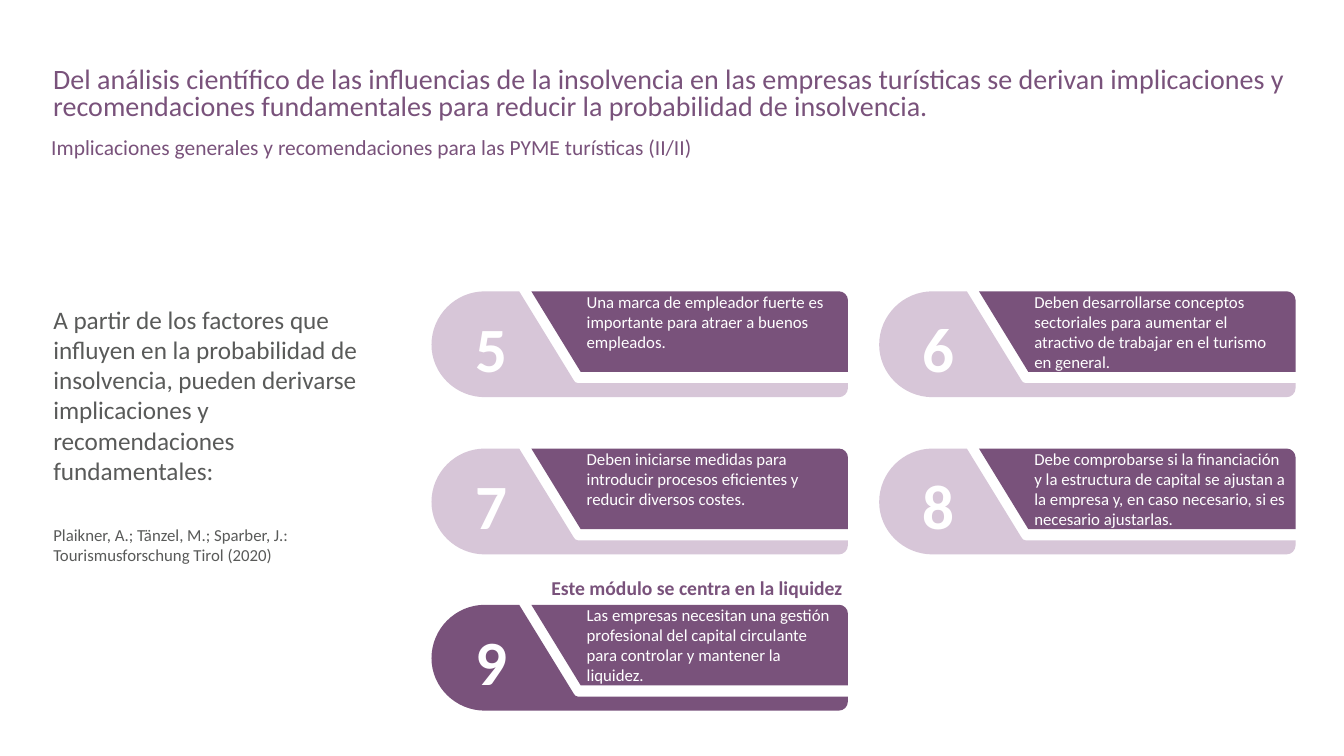
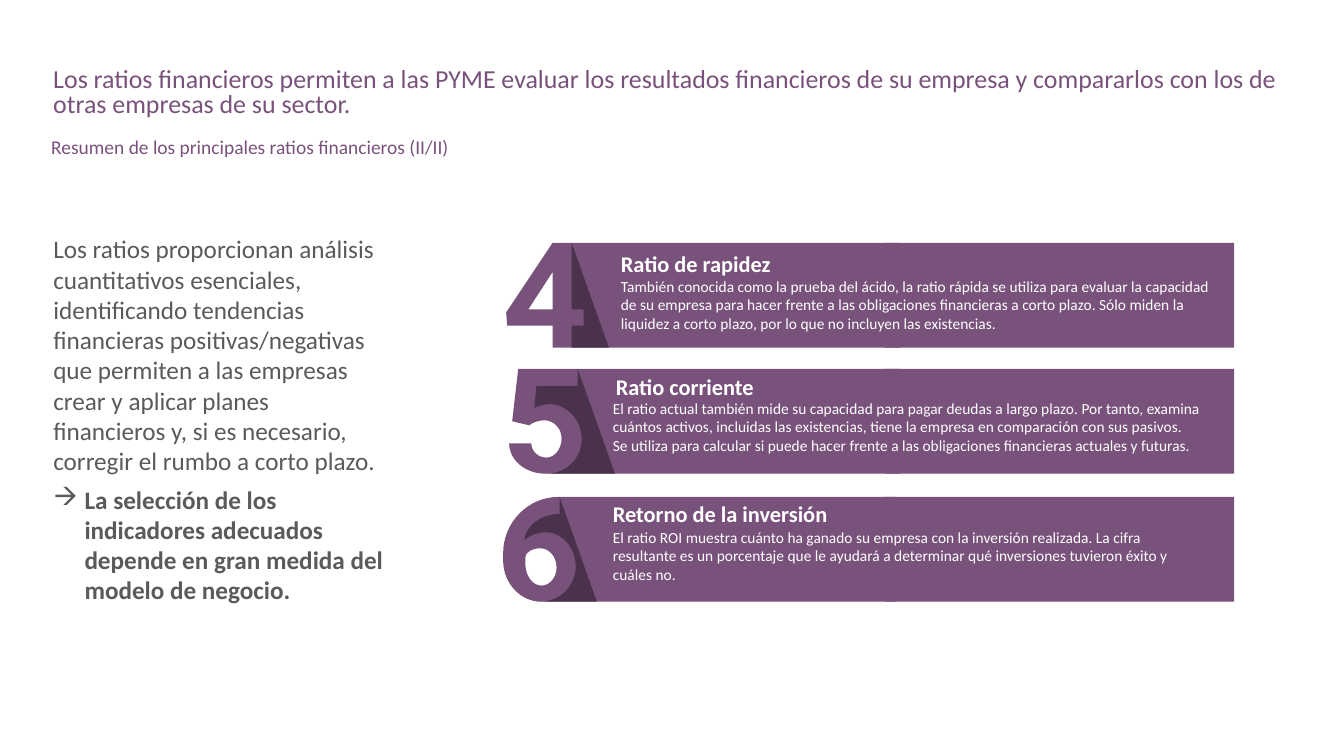
from dataclasses import dataclass

from lxml.etree import SubElement
from pptx import Presentation
from pptx.dml.color import RGBColor
from pptx.enum.shapes import MSO_SHAPE
from pptx.enum.text import MSO_ANCHOR as ANCHOR, PP_ALIGN as ALIGN
from pptx.oxml.ns import qn
from pptx.util import Inches, Pt


@dataclass(frozen=True)
class Theme:
    """Colours, fonts and type sizes shared by the slides."""
    plum: str = "79527B"
    lilac: str = "D7C6D8"
    shade: str = "4B324C"
    grey: str = "595A59"
    white: str = "FFFFFF"
    font: str = "Calibri"
    bullet_font: str = "Wingdings"
    number: float = 45
    lead: float = 18
    heading: float = 16
    note: float = 14
    small: float = 12
    detail: float = 11


T = Theme()

CARD_TOPS = (2.89, 4.45, 6)
CARD_PANEL = [[(0.99, 0), (4.04, 0), (4.13, 0, 4.13, 0.09), (4.13, 0.8), (1.48, 0.8)]]
CARD_BASE = [[(1.45, 0.91), (1.42, 0.91, 1.41, 0.88), (0.87, 0), (0.53, 0),
              (0, 0, 0, 0.53), (0, 1.05, 0.53, 1.05), (4.04, 1.05),
              (4.13, 1.05, 4.13, 0.96), (4.13, 0.91)]]

FOUR_BODY = [[(0.48, 0), (0.02, 0.69), (0.03, 0.82), (0.48, 0.82), (0.48, 1.04),
              (3.93, 1.04), (3.93, 0)],
             [(0.48, 0.66), (0.24, 0.66), (0.48, 0.29)]]
FOUR_SHADE = [[(0.67, 0), (0.67, 0.66), (0.79, 0.66), (0.79, 0.82), (0.67, 0.82),
               (0.67, 1.04), (1.04, 1.04)]]
FIVE_BODY = [[(0.14, 0), (0.08, 0.52), (0.25, 0.56), (0.3, 0.51, 0.4, 0.51),
              (0.57, 0.51, 0.57, 0.69), (0.57, 0.88, 0.42, 0.88),
              (0.27, 0.88, 0.27, 0.74), (0.05, 0.74), (0.05, 1.04, 0.41, 1.04),
              (3.93, 1.04), (3.93, 0)]]
FIVE_SHADE = [[(0.73, 0), (0.73, 0.17), (0.32, 0.17), (0.3, 0.39),
               (0.36, 0.35, 0.45, 0.35), (0.77, 0.35, 0.77, 0.7),
               (0.77, 1.04, 0.42, 1.04), (1.1, 1.04)]]
SIX_BODY = [[(0.54, 0), (-0.01, 0, -0.01, 0.56), (-0.01, 0.63),
             (-0.01, 1.04, 0.37, 1.04), (3.88, 1.04), (3.88, 0)],
            [(0.21, 0.6), (0.21, 0.51, 0.36, 0.51), (0.52, 0.51, 0.52, 0.7),
             (0.52, 0.88, 0.37, 0.88), (0.21, 0.88, 0.21, 0.66)]]
SIX_SHADE = [[(0.55, 0), (0.55, 0.17), (0.22, 0.17, 0.2, 0.43),
              (0.28, 0.35, 0.41, 0.35), (0.71, 0.35, 0.71, 0.69),
              (0.71, 1.04, 0.36, 1.04), (0.92, 1.04)]]


def add_bullet(p, char, indent):
    """Give a paragraph a hanging bullet."""
    pPr = p._p.get_or_add_pPr()
    pPr.set("marL", str(Inches(indent)))
    pPr.set("indent", str(-Inches(indent)))
    SubElement(pPr, qn("a:buFont")).set("typeface", T.bullet_font)
    SubElement(pPr, qn("a:buChar")).set("char", char)


def add_text(slide, box, content, **fmt):
    """Add a text box; content is a string or a list of (string, own format)."""
    tf = slide.shapes.add_textbox(*map(Inches, box)).text_frame
    tf.word_wrap = True
    tf.vertical_anchor = fmt.get("anchor", ANCHOR.TOP)
    tf.margin_bottom = Inches(fmt.get("bottom", 0.05))
    paragraphs = [(content, {})] if isinstance(content, str) else content
    for i, (text, own) in enumerate(paragraphs):
        f = {**fmt, **own}
        p = tf.paragraphs[0] if i == 0 else tf.add_paragraph()
        p.alignment = f.get("align", ALIGN.LEFT)
        p.line_spacing = f.get("spacing", 1.0)
        p.space_before = Pt(f.get("before", 0))
        if "bullet" in f:
            add_bullet(p, f["bullet"], 0.31)
        p.text = text
        for r in p.runs:
            r.font.name = T.font
            r.font.size = Pt(f["size"])
            r.font.bold = f.get("bold", False)
            r.font.color.rgb = RGBColor.from_string(f["color"])


def paint(sp, color):
    """Give a shape a flat fill without line or shadow."""
    sp.shadow.inherit = False
    sp.fill.solid()
    sp.fill.fore_color.rgb = RGBColor.from_string(color)
    sp.line.fill.background()


def control_points(contour):
    """Turn points and (corner, end) bends into line and curve points."""
    points = [contour[0]]
    for item in contour[1:]:
        if len(item) == 4:
            start, corner, end = points[-1], item[:2], item[2:]
            points += [tuple(a + 0.55 * (c - a) for a, c in zip(near, corner))
                       for near in (start, end)]
        points.append(item[-2:])
    return points


def round_bends(sp, contours):
    """Join the three segments of every bend into one curve."""
    segments = iter(list(sp._element.iter(qn("a:lnTo"))))
    for contour in contours:
        for item in contour[1:]:
            first = next(segments)
            if len(item) == 4:
                first.tag = qn("a:cubicBezTo")
                for _ in range(2):
                    extra = next(segments)
                    extra.getparent().remove(extra)
                    first.append(extra[0])


def add_outline(slide, left, top, contours, color):
    """Draw closed contours measured from a top left corner."""
    builder = None
    for contour in contours:
        points = [(Inches(left + x), Inches(top + y)) for x, y in control_points(contour)]
        if builder is None:
            builder = slide.shapes.build_freeform(*points[0])
        else:
            builder.move_to(*points[0])
        builder.add_line_segments(points[1:])
    sp = builder.convert_to_shape()
    round_bends(sp, contours)
    paint(sp, color)


def add_header(slide, title, title_size, subtitle, subtitle_size):
    """Place the title and the subtitle."""
    add_text(slide, (0.43, 0.63, 12.54, 0.64), title,
             size=title_size, color=T.plum, spacing=0.8)
    add_text(slide, (0.41, 1.35, 12.56, 0.28), subtitle,
             size=subtitle_size, color=T.plum, spacing=0.7)


def add_sidebar(slide, paragraphs, bottom=0.05):
    """Place the vertically centred text on the left."""
    add_text(slide, (0.43, 1.79, 3.49, 5.04), paragraphs, size=T.lead,
             color=T.grey, anchor=ANCHOR.MIDDLE, bottom=bottom)


def add_card(slide, left, top, number, text, base):
    """Draw a numbered card."""
    add_outline(slide, left, top, CARD_PANEL, T.plum)
    add_outline(slide, left, top, CARD_BASE, base)
    add_text(slide, (left + 0.33, top + 0.13, 0.52, 0.86), number,
             size=T.number, color=T.white, bold=True, align=ALIGN.CENTER)
    add_text(slide, (left + 1.44, top - 0.05, 2.69, 0.91), text,
             size=T.small, color=T.white)


def add_band(slide, left, top, body, shade, title, title_at, text, text_at):
    """Draw a band that starts with a large cut-out digit."""
    add_outline(slide, left, top, body, T.plum)
    add_outline(slide, left, top, shade, T.shade)
    paint(slide.shapes.add_shape(MSO_SHAPE.RECTANGLE, Inches(left + 3.78), Inches(top),
                                 Inches(3.46), Inches(1.04)), T.plum)
    add_text(slide, (left + title_at[0], top + title_at[1], 3.19, 0.37), title,
             size=T.heading, color=T.white, bold=True)
    add_text(slide, (left + text_at[0], top + text_at[1], 6.05, 0.66), text,
             size=T.detail, color=T.white)


def build_implications(slide):
    """Build the slide of numbered recommendations."""
    add_header(slide, "Del análisis científico de las influencias de la insolvencia en las "
               "empresas turísticas se derivan implicaciones y recomendaciones fundamentales "
               "para reducir la probabilidad de insolvencia.", 20,
               "Implicaciones generales y recomendaciones para las PYME turísticas (II/II)", 15.3)
    add_sidebar(slide, [
        ("A partir de los factores que influyen en la probabilidad de insolvencia, pueden "
         "derivarse implicaciones y recomendaciones fundamentales:", {}),
        ("Plaikner, A.; Tänzel, M.; Sparber, J.: Tourismusforschung Tirol (2020)",
         {"size": T.small, "before": 28})])
    cards = [
        ("5", "Una marca de empleador fuerte es importante para atraer a buenos empleados.",
         T.lilac),
        ("6", "Deben desarrollarse conceptos sectoriales para aumentar el atractivo de "
              "trabajar en el turismo en general.", T.lilac),
        ("7", "Deben iniciarse medidas para introducir procesos eficientes y reducir "
              "diversos costes.", T.lilac),
        ("8", "Debe comprobarse si la financiación y la estructura de capital se ajustan a la "
              "empresa y, en caso necesario, si es necesario ajustarlas.", T.lilac),
        ("9", "Las empresas necesitan una gestión profesional del capital circulante para "
              "controlar y mantener la liquidez.", T.plum),
    ]
    for i, card in enumerate(cards):
        row, col = divmod(i, 2)
        add_card(slide, 4.28 + 4.44 * col, CARD_TOPS[row], *card)
    add_text(slide, (5.37, 5.66, 3.61, 0.34), "Este módulo se centra en la liquidez",
             size=T.note, color=T.plum, bold=True)


def build_ratios(slide):
    """Build the slide of financial ratios."""
    add_header(slide, "Los ratios financieros permiten a las PYME evaluar los resultados "
               "financieros de su empresa y compararlos con los de otras empresas de su sector.",
               18.5, "Resumen de los principales ratios financieros (II/II)", 13.9)
    add_sidebar(slide, [
        ("Los ratios proporcionan análisis cuantitativos esenciales, identificando tendencias "
         "financieras positivas/negativas que permiten a las empresas crear y aplicar planes "
         "financieros y, si es necesario, corregir el rumbo a corto plazo.", {}),
        ("La selección de los indicadores adecuados depende en gran medida del modelo de "
         "negocio.", {"bold": True, "before": 6, "bullet": "à"})], bottom=0.35)
    bands = [
        (2.41, FOUR_BODY, FOUR_SHADE, "Ratio de rapidez", (1.06, 0.02),
         "También conocida como la prueba del ácido, la ratio rápida se utiliza para evaluar la "
         "capacidad de su empresa para hacer frente a las obligaciones financieras a corto "
         "plazo. Sólo miden la liquidez a corto plazo, por lo que no incluyen las existencias.",
         (1.06, 0.29)),
        (3.66, FIVE_BODY, FIVE_SHADE, "Ratio corriente", (1.01, -0.01),
         "El ratio actual también mide su capacidad para pagar deudas a largo plazo. Por "
         "tanto, examina cuántos activos, incluidas las existencias, tiene la empresa en "
         "comparación con sus pasivos.\vSe utiliza para calcular si puede hacer frente a las "
         "obligaciones financieras actuales y futuras.",
         (0.98, 0.25)),
        (4.93, SIX_BODY, SIX_SHADE, "Retorno de la inversión", (0.98, -0.02),
         "El ratio ROI muestra cuánto ha ganado su empresa con la inversión realizada. La cifra "
         "resultante es un porcentaje que le ayudará a determinar qué inversiones tuvieron "
         "éxito y cuáles no.",
         (0.98, 0.26)),
    ]
    for band in bands:
        add_band(slide, 5, *band)


def main():
    """Build and save the presentation."""
    prs = Presentation()
    prs.slide_width, prs.slide_height = Inches(13.33), Inches(7.5)
    for build in (build_implications, build_ratios):
        build(prs.slides.add_slide(prs.slide_layouts[6]))
    prs.save("out.pptx")


if __name__ == "__main__":
    main()
